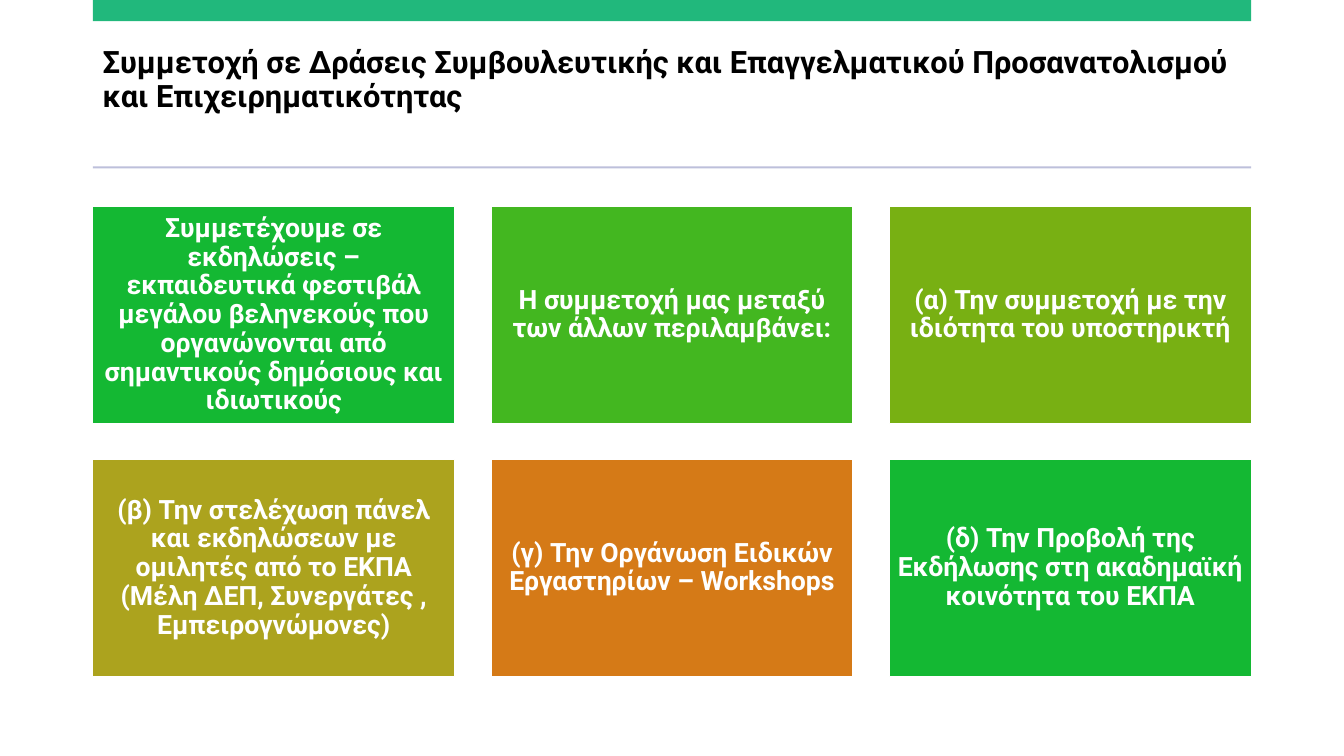
from pptx import Presentation
from pptx.dml.color import RGBColor
from pptx.enum.shapes import MSO_SHAPE
from pptx.enum.text import MSO_ANCHOR, PP_ALIGN
from pptx.util import Inches, Pt

COLORS = {
    "black": "000000",
    "white": "FFFFFF",
    "teal": "21B87C",
    "rule": "BDC0DB",
    "green": "14B833",
    "leaf": "43B720",
    "lime": "78B013",
    "olive": "ACA31E",
    "orange": "D57A17",
}
LEFT, WIDTH = 0.92, 11.49
TOP, CARD_W, CARD_H = 2.05, 3.59, 2.15
STEP_X, STEP_Y = 3.95, 2.51

deck = Presentation()
deck.slide_width, deck.slide_height = Inches(13.33), Inches(7.5)
slide = deck.slides.add_slide(deck.slide_layouts[6])


def add_box(left, top, width, height, color):
    box = slide.shapes.add_shape(
        MSO_SHAPE.RECTANGLE, Inches(left), Inches(top), Inches(width), Inches(height)
    )
    box.shadow.inherit = False
    box.fill.solid()
    box.fill.fore_color.rgb = RGBColor.from_string(COLORS[color])
    box.line.fill.background()
    return box


def set_text(frame, text, size, color, align, inset):
    frame.word_wrap = True
    frame.margin_left = frame.margin_right = Inches(inset)
    frame.margin_top = frame.margin_bottom = Inches(inset)
    para = frame.paragraphs[0]
    para.text = text
    para.alignment = align
    para.line_spacing = 0.9
    para.font.name = "Roboto"
    para.font.size = Pt(size)
    para.font.bold = True
    para.font.color.rgb = RGBColor.from_string(COLORS[color])


title = slide.shapes.add_textbox(Inches(LEFT), Inches(0.37), Inches(WIDTH), Inches(1.18))
title.text_frame.vertical_anchor = MSO_ANCHOR.TOP
set_text(
    title.text_frame,
    "Συμμετοχή σε Δράσεις Συμβουλευτικής και Επαγγελματικού Προσανατολισμού "
    "και Επιχειρηματικότητας",
    22, "black", PP_ALIGN.LEFT, 0.1,
)

add_box(LEFT, 0, WIDTH, 0.21, "teal")
add_box(LEFT, 1.65, WIDTH, 0.02, "rule")

cards = [
    ("green", "Συμμετέχουμε σε εκδηλώσεις – εκπαιδευτικά φεστιβάλ μεγάλου βεληνεκούς "
              "που οργανώνονται από σημαντικούς δημόσιους και ιδιωτικούς"),
    ("leaf", "Η συμμετοχή μας μεταξύ των άλλων περιλαμβάνει:"),
    ("lime", "(α) Την συμμετοχή με την ιδιότητα του υποστηρικτή"),
    ("olive", "(β) Την στελέχωση πάνελ και εκδηλώσεων με ομιλητές από το ΕΚΠΑ "
              "(Μέλη ΔΕΠ, Συνεργάτες , Εμπειρογνώμονες)"),
    ("orange", "(γ) Την Οργάνωση Ειδικών Εργαστηρίων – Workshops"),
    ("green", "(δ) Την Προβολή της Εκδήλωσης στη ακαδημαϊκή κοινότητα του ΕΚΠΑ"),
]
for i, (color, text) in enumerate(cards):
    row, col = divmod(i, 3)
    card = add_box(LEFT + col * STEP_X, TOP + row * STEP_Y, CARD_W, CARD_H, color)
    card.line.color.rgb = RGBColor.from_string(COLORS["white"])
    card.line.width = Pt(1)
    card.text_frame.vertical_anchor = MSO_ANCHOR.MIDDLE
    set_text(card.text_frame, text, 19, "white", PP_ALIGN.CENTER, 0.08)

deck.save("out.pptx")
